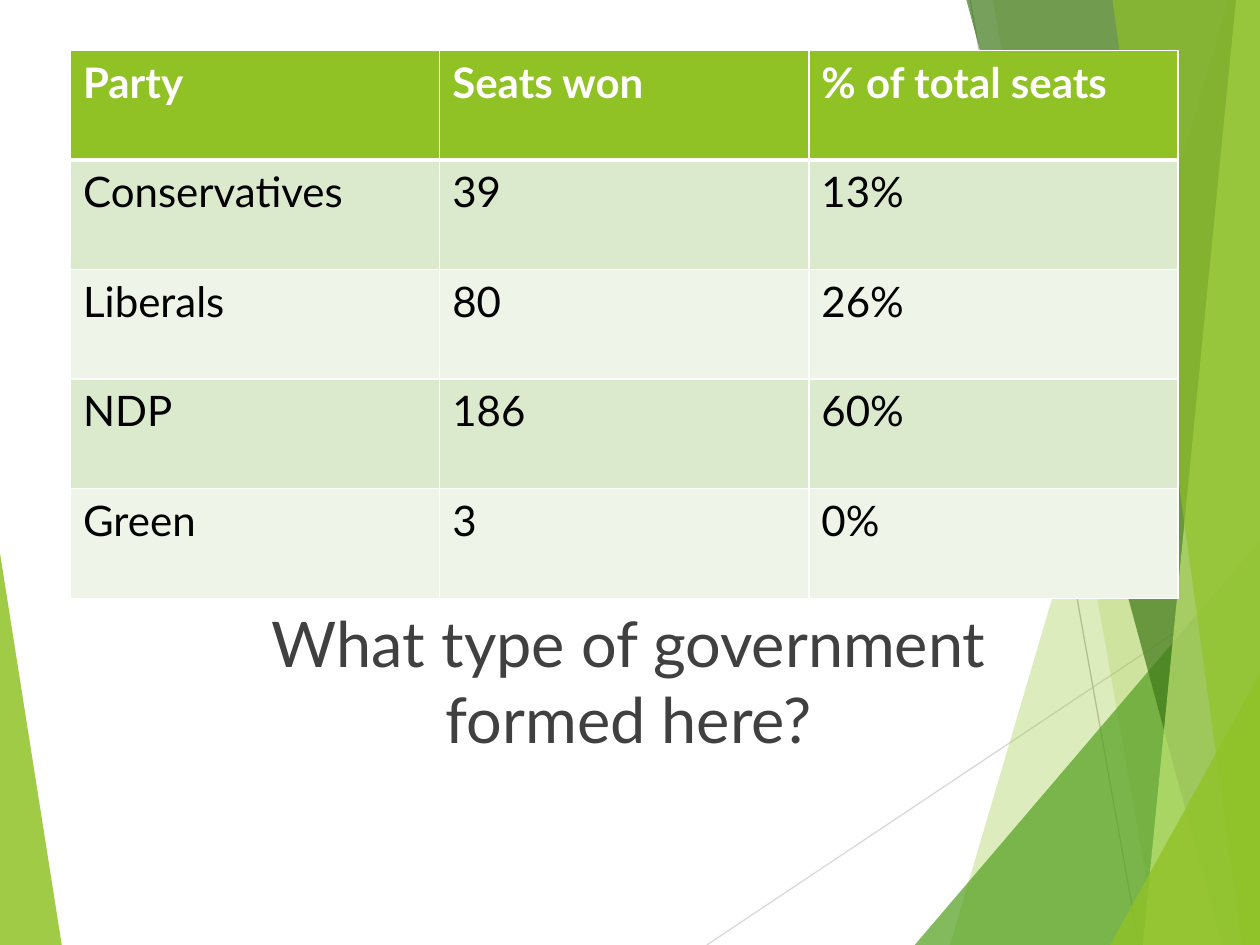
from lxml.etree import SubElement
from pptx import Presentation
from pptx.dml.color import RGBColor
from pptx.enum.shapes import MSO_CONNECTOR
from pptx.enum.text import PP_ALIGN
from pptx.oxml.ns import qn
from pptx.util import Inches, Pt

FONT = "Lato"
WHITE = RGBColor(0xFF, 0xFF, 0xFF)
BLACK = RGBColor(0, 0, 0)
TEXT_GRAY = RGBColor(0x40, 0x40, 0x40)
LIME = RGBColor(0x90, 0xC2, 0x26)
GREEN = RGBColor(0x54, 0xA0, 0x21)
DARK_GREEN = RGBColor(0x3F, 0x78, 0x19)
PALE_LIME = RGBColor(0xC0, 0xE4, 0x74)
BAND_DARK = RGBColor(0xDB, 0xE9, 0xCD)
BAND_LIGHT = RGBColor(0xEE, 0xF4, 0xE8)
LINE_LIGHT = RGBColor(0xD9, 0xD9, 0xD9)
LINE_GRAY = RGBColor(0xBF, 0xBF, 0xBF)

WIDTH, HEIGHT = 10, 7.5
QUESTION = "What type of government formed here?"
RESULTS = [
    ("Party", "Seats won", "% of total seats"),
    ("Conservatives", "39", "13%"),
    ("Liberals", "80", "26%"),
    ("NDP", "186", "60%"),
    ("Green", "3", "0%"),
]
TABLE_LEFT, TABLE_TOP = 0.56, 0.4
COLUMN_WIDTH, ROW_HEIGHT = 2.93, 0.87

LEFT_SHARD = (LIME, 85, [(0, 4.39), (0.49, HEIGHT), (0, HEIGHT)])
RAYS = [  # start, end, colour
    ((5.61, HEIGHT), (WIDTH, 4.57), LINE_LIGHT),
    ((7.7, 0), (9.04, HEIGHT), LINE_GRAY),
]
# Right-hand shards: colour, opacity in percent, top corner, bottom corner
RIGHT_SHARDS = [
    (LIME, 30, (9.75, 0), 7.54),
    (LIME, 20, (7.88, 0), 9.19),
    (GREEN, 72, (WIDTH, 4.29), 7.26),
    (DARK_GREEN, 70, (7.67, 0), 9.7),
    (PALE_LIME, 70, (9.81, 0), 9.07),
    (LIME, 65, (8.83, 0), 9.86),
    (LIME, 80, (WIDTH, 5.35), 8.81),
]


def add_shard(page, color, opacity, corners):
    points = [(Inches(x), Inches(y)) for x, y in corners]
    builder = page.shapes.build_freeform(*points[0])
    builder.add_line_segments(points[1:])
    shard = builder.convert_to_shape()
    shard.shadow.inherit = False
    shard.line.fill.background()
    shard.fill.solid()
    shard.fill.fore_color.rgb = color
    tint = shard.fill._xPr.find(qn("a:solidFill"))[0]
    SubElement(tint, qn("a:alpha"), val=str(opacity * 1000))


def add_ray(page, start, end, color):
    ends = [Inches(value) for value in start + end]
    ray = page.shapes.add_connector(MSO_CONNECTOR.STRAIGHT, *ends)
    ray.line.color.rgb = color
    ray.line.width = Pt(0.75)
    SubElement(ray._element.spPr, qn("a:effectLst"))


def set_borders(cell, bottom):
    """Draw white cell borders, 1 pt wide except for the bottom one."""
    properties = cell._tc.get_or_add_tcPr()
    for position, (side, width) in enumerate(
            [("lnL", 1), ("lnR", 1), ("lnT", 1), ("lnB", bottom)]):
        line = SubElement(properties, qn(f"a:{side}"), w=str(Pt(width)))
        fill = SubElement(line, qn("a:solidFill"))
        SubElement(fill, qn("a:srgbClr"), val=str(WHITE))
        properties.insert(position, line)


def style_text(para, size, color, bold=False):
    para.font.name = FONT
    para.font.size = Pt(size)
    para.font.color.rgb = color
    para.font.bold = bold


def add_results(page):
    rows, columns = len(RESULTS), len(RESULTS[0])
    table = page.shapes.add_table(
        rows, columns, Inches(TABLE_LEFT), Inches(TABLE_TOP),
        Inches(columns * COLUMN_WIDTH), Inches(rows * ROW_HEIGHT)).table
    for row, values in enumerate(RESULTS):
        header = row == 0
        band = LIME if header else (BAND_LIGHT, BAND_DARK)[row % 2]
        for column, value in enumerate(values):
            cell = table.cell(row, column)
            cell.text = value
            cell.fill.solid()
            cell.fill.fore_color.rgb = band
            set_borders(cell, 3 if header else 1)
            style_text(cell.text_frame.paragraphs[0], 24,
                       WHITE if header else BLACK, header)


def add_question(page):
    box = page.shapes.add_textbox(
        Inches(1.6), Inches(4.75), Inches(6.78), Inches(2.75))
    box.text_frame.word_wrap = True
    para = box.text_frame.paragraphs[0]
    para.text = QUESTION
    para.alignment = PP_ALIGN.CENTER
    style_text(para, 36, TEXT_GRAY)


def main():
    deck = Presentation()
    deck.slide_width, deck.slide_height = Inches(WIDTH), Inches(HEIGHT)
    page = deck.slides.add_slide(deck.slide_layouts[6])
    add_shard(page, *LEFT_SHARD)
    for ray in RAYS:
        add_ray(page, *ray)
    for color, opacity, top, bottom in RIGHT_SHARDS:
        corners = [top, (bottom, HEIGHT), (WIDTH, HEIGHT)]
        if top[0] < WIDTH:
            corners.append((WIDTH, top[1]))
        add_shard(page, color, opacity, corners)
    add_question(page)
    add_results(page)
    deck.save("out.pptx")


if __name__ == "__main__":
    main()
